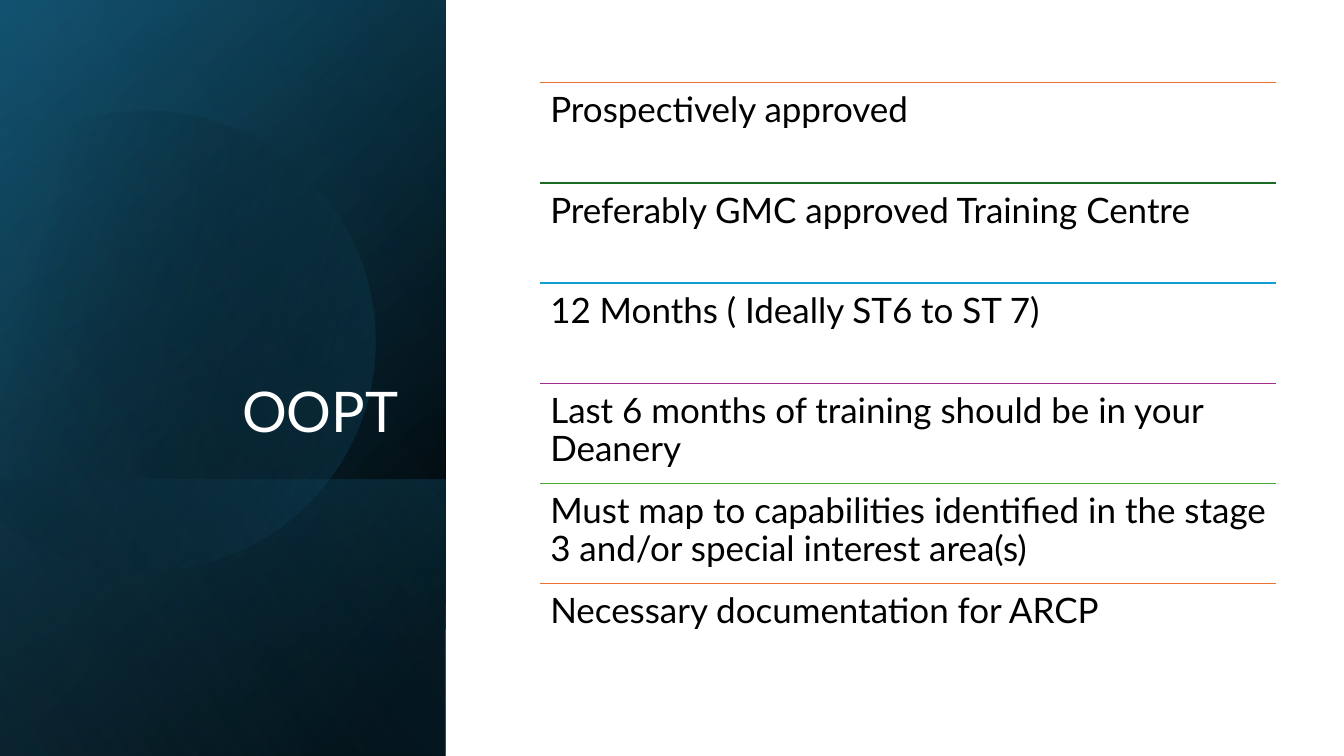
import math
from dataclasses import dataclass

from lxml import etree
from pptx import Presentation
from pptx import util as u
from pptx.dml.color import RGBColor
from pptx.enum import shapes, text
from pptx.oxml.ns import qn

BLACK = RGBColor(0x00, 0x00, 0x00)
WHITE = RGBColor(0xFF, 0xFF, 0xFF)
NAVY = RGBColor(0x10, 0x48, 0x62)
TEAL = RGBColor(0x15, 0x60, 0x82)
SKY = RGBColor(0x46, 0xB1, 0xE1)
ORANGE = RGBColor(0xE9, 0x71, 0x32)
GREEN = RGBColor(0x19, 0x6B, 0x24)
BLUE = RGBColor(0x0F, 0x9E, 0xD5)
PURPLE = RGBColor(0xA0, 0x2B, 0x93)
LIME = RGBColor(0x4E, 0xA7, 0x2E)

FONT = "Lato"
LIST_LEFT, LIST_TOP, LIST_WIDTH, ROW_HEIGHT = 5.36, 0.82, 7.3, 0.99
ROW_PITCH = 0.994
CIRCLE_CENTRE = (1.585, 3.345)
CIRCLE_ROTATION = 343.9
CURVE_STEPS = 24

Point = tuple[float, float]


@dataclass
class Stop:
    position: int
    color: RGBColor
    opacity: int = 100


@dataclass
class Gradient:
    start: Stop
    end: Stop
    angle: int


@dataclass
class Panel:
    left: float
    top: float
    width: float
    gradient: Gradient
    height: float = 4.42


@dataclass
class Item:
    label: str
    color: RGBColor


BACK_PANELS = [
    Panel(-1.54, 1.54, 7.5, Gradient(Stop(8, BLACK), Stop(100, NAVY), 50)),
    Panel(-1.54, 1.55, 7.5, Gradient(Stop(0, BLACK, 0), Stop(99, TEAL, 46), 30)),
    Panel(0.84, 3.92, 2.74, Gradient(Stop(2, TEAL, 29), Stop(100, BLACK, 30), 130)),
]
FRONT_PANEL = Panel(-1.54, 1.54, 7.5, Gradient(Stop(0, BLACK, 0), Stop(99, SKY, 11), 120))
CIRCLE_GRADIENT = Gradient(Stop(29, BLACK, 0), Stop(100, TEAL, 43), 30)
CIRCLE_START = (1.49, 1.1)
CIRCLE_SEGMENTS = [
    [(2.46, 1.12), (3.35, 1.77), (3.63, 2.75)],
    [(3.98, 3.97), (3.28, 5.23), (2.07, 5.58)],
    [(1.31, 5.8), (0.53, 5.61), (-0.03, 5.14)],
    [(-0.15, 5.03)],
    [(-0.15, 1.75)],
    [(0, 1.61)],
    [(0.23, 1.42), (0.5, 1.28), (0.8, 1.19)],
    [(1.03, 1.13), (1.26, 1.1), (1.49, 1.1)],
]
ITEMS = [
    Item("Prospectively approved", ORANGE),
    Item("Preferably GMC approved Training Centre", GREEN),
    Item("12 Months ( Ideally ST6 to ST 7)", BLUE),
    Item("Last 6 months of training should be in your Deanery", PURPLE),
    Item("Must map to capabilities identified in the stage 3 and/or special interest area(s)", LIME),
    Item("Necessary documentation for ARCP", ORANGE),
]


def fill_gradient(sp, gradient: Gradient) -> None:
    sp.shadow.inherit = False
    sp.line.fill.background()
    sp.fill.gradient()
    sp.fill.gradient_angle = 360 - gradient.angle
    for target, stop in zip(sp.fill.gradient_stops, (gradient.start, gradient.end)):
        target.position = stop.position / 100
        target.color.rgb = stop.color
    colors = sp._element.spPr.iter(qn("a:srgbClr"))
    for color, stop in zip(colors, (gradient.start, gradient.end)):
        if stop.opacity < 100:
            etree.SubElement(color, qn("a:alpha")).set("val", str(stop.opacity * 1000))


def add_panel(s, panel: Panel) -> None:
    sp = s.shapes.add_shape(
        shapes.MSO_SHAPE.RECTANGLE, u.Inches(panel.left), u.Inches(panel.top),
        u.Inches(panel.width), u.Inches(panel.height))
    sp.rotation = 90
    sp._element.spPr.find(qn("a:xfrm")).set("flipH", "1")
    fill_gradient(sp, panel.gradient)


def bezier(points: list[Point], t: float) -> Point:
    n = len(points) - 1
    weights = [math.comb(n, i) * t ** i * (1 - t) ** (n - i) for i in range(n + 1)]
    return (sum(w * x for w, (x, _) in zip(weights, points)),
            sum(w * y for w, (_, y) in zip(weights, points)))


def unrotate(point: Point) -> tuple[int, int]:
    angle = math.radians(-CIRCLE_ROTATION)
    cx, cy = CIRCLE_CENTRE
    dx, dy = point[0] - cx, point[1] - cy
    return (u.Inches(cx + dx * math.cos(angle) - dy * math.sin(angle)),
            u.Inches(cy + dx * math.sin(angle) + dy * math.cos(angle)))


def add_circle(s) -> None:
    outline = [CIRCLE_START]
    for segment in CIRCLE_SEGMENTS:
        controls = [outline[-1], *segment]
        steps = CURVE_STEPS if len(segment) == 3 else 1
        outline += [bezier(controls, i / steps) for i in range(1, steps + 1)]
    vertices = [unrotate(point) for point in outline]
    builder = s.shapes.build_freeform(*vertices[0])
    builder.add_line_segments(vertices[1:], close=True)
    sp = builder.convert_to_shape()
    sp.rotation = CIRCLE_ROTATION
    fill_gradient(sp, CIRCLE_GRADIENT)


def add_title(s, label: str) -> None:
    sp = s.shapes.title
    s.shapes._spTree.append(sp._element)
    sp.left, sp.top, sp.width, sp.height = map(u.Inches, (0.64, 1.84, 3.41, 2.62))
    tf = sp.text_frame
    tf.text = label
    tf.word_wrap = True
    tf.auto_size = text.MSO_AUTO_SIZE.NONE
    tf.vertical_anchor = text.MSO_ANCHOR.BOTTOM
    p = tf.paragraphs[0]
    p.alignment = text.PP_ALIGN.RIGHT
    format_paragraph(p, 40, WHITE)


def format_paragraph(p, size: int, color: RGBColor) -> None:
    p.line_spacing = 0.9
    p.font.name = FONT
    p.font.size = u.Pt(size)
    p.font.color.rgb = color


def add_item(group, item: Item, row: int) -> None:
    left, top, width = u.Inches(LIST_LEFT), u.Inches(LIST_TOP + row * ROW_PITCH), u.Inches(LIST_WIDTH)
    rule = group.shapes.add_connector(shapes.MSO_CONNECTOR.STRAIGHT, left, top, left + width, top)
    rule.line.color.rgb = item.color
    rule.line.width = u.Pt(1)
    etree.SubElement(rule._element.spPr, qn("a:effectLst"))
    sp = group.shapes.add_textbox(left, top, width, u.Inches(ROW_HEIGHT))
    tf = sp.text_frame
    tf.word_wrap = True
    tf.margin_left = tf.margin_right = tf.margin_top = tf.margin_bottom = u.Inches(0.1)
    tf.text = item.label
    p = tf.paragraphs[0]
    p.space_after = u.Pt(8.75)
    format_paragraph(p, 25, BLACK)


def main() -> None:
    prs = Presentation()
    prs.slide_width, prs.slide_height = u.Inches(13.33), u.Inches(7.5)
    s = prs.slides.add_slide(prs.slide_layouts[5])
    for panel in BACK_PANELS:
        add_panel(s, panel)
    add_circle(s)
    add_panel(s, FRONT_PANEL)
    add_title(s, "OOPT")
    group = s.shapes.add_group_shape()
    for row, item in enumerate(ITEMS):
        add_item(group, item, row)
    prs.save("out.pptx")


if __name__ == "__main__":
    main()
